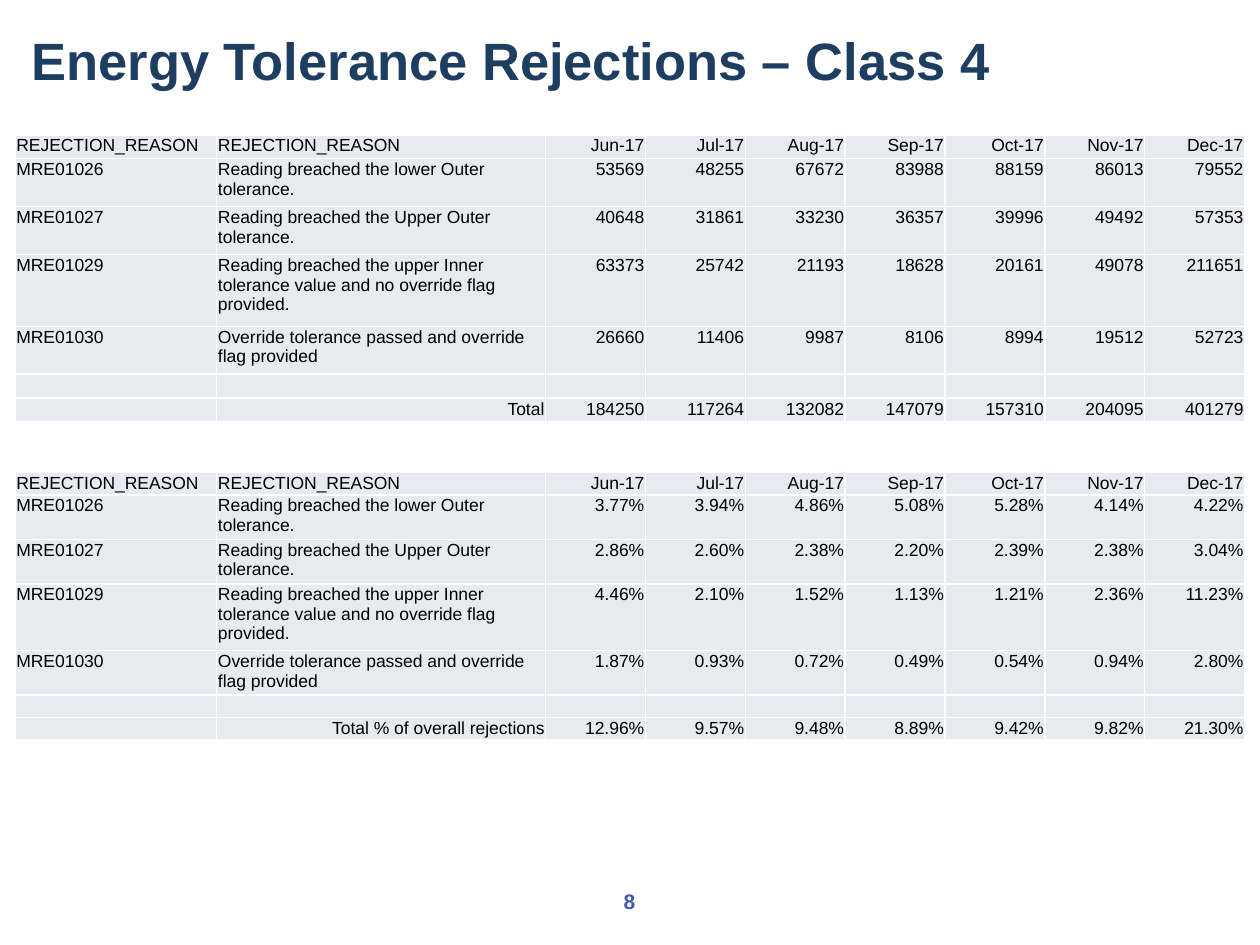
"""Builds a slide with two tables of energy tolerance rejections by month."""
from dataclasses import dataclass

from lxml import etree
from pptx import Presentation
from pptx.dml.color import RGBColor
from pptx.enum.text import MSO_ANCHOR, PP_ALIGN
from pptx.oxml.ns import qn
from pptx.util import Inches, Pt

LEFT, CENTER, RIGHT = PP_ALIGN.LEFT, PP_ALIGN.CENTER, PP_ALIGN.RIGHT
TOP, MIDDLE = MSO_ANCHOR.TOP, MSO_ANCHOR.MIDDLE
NAVY = RGBColor(0x1D, 0x3E, 0x61)
BLUE = RGBColor(0x3E, 0x5A, 0xA8)
BLACK = RGBColor(0x00, 0x00, 0x00)
WHITE = RGBColor(0xFF, 0xFF, 0xFF)
PALE = RGBColor(0xE8, 0xEA, 0xF1)
FONT = "Arial"

TABLE_LEFT, TABLE_WIDTH = 0.12, 9.76
CODE_WIDTH, REASON_WIDTH = 1.6, 2.61
MONTHS = ["Jun-17", "Jul-17", "Aug-17", "Sep-17", "Oct-17", "Nov-17", "Dec-17"]
MONTH_WIDTH = (TABLE_WIDTH - CODE_WIDTH - REASON_WIDTH) / len(MONTHS)
REASONS = [
    ("MRE01026", "Reading breached the lower Outer tolerance."),
    ("MRE01027", "Reading breached the Upper Outer tolerance."),
    ("MRE01029", "Reading breached the upper Inner tolerance value and no override flag provided."),
    ("MRE01030", "Override tolerance passed and override flag provided"),
]
ROW_LINES = [1, 2, 2, 3, 2, 1, 1]


@dataclass
class RejectionTable:
    top: float
    line_height: float
    monthly_values: list[str]
    total_label: str
    totals: str


REJECTION_TABLES = [
    RejectionTable(1.07, 0.19, [
        "53569 48255 67672 83988 88159 86013 79552",
        "40648 31861 33230 36357 39996 49492 57353",
        "63373 25742 21193 18628 20161 49078 211651",
        "26660 11406 9987 8106 8994 19512 52723",
    ], "Total", "184250 117264 132082 147079 157310 204095 401279"),
    RejectionTable(3.75, 2.12 / sum(ROW_LINES), [
        "3.77% 3.94% 4.86% 5.08% 5.28% 4.14% 4.22%",
        "2.86% 2.60% 2.38% 2.20% 2.39% 2.38% 3.04%",
        "4.46% 2.10% 1.52% 1.13% 1.21% 2.36% 11.23%",
        "1.87% 0.93% 0.72% 0.49% 0.54% 0.94% 2.80%",
    ], "Total % of overall rejections", "12.96% 9.57% 9.48% 8.89% 9.42% 9.82% 21.30%"),
]


def write(frame, text: str, *, size: float, color: RGBColor, bold: bool = False, align=LEFT) -> None:
    paragraph = frame.paragraphs[0]
    paragraph.alignment = align
    if not text:
        etree.SubElement(paragraph._p, qn("a:endParaRPr"), sz=str(int(size * 100)))
        return
    run = paragraph.add_run()
    run.text = text
    run.font.name = FONT
    run.font.size = Pt(size)
    run.font.bold = bold
    run.font.color.rgb = color


def add_label(slide, text: str, left: float, top: float, width: float, height: float, **text_format) -> None:
    frame = slide.shapes.add_textbox(Inches(left), Inches(top), Inches(width), Inches(height)).text_frame
    frame.word_wrap = True
    frame.vertical_anchor = MIDDLE
    frame.margin_left = frame.margin_right = frame.margin_top = frame.margin_bottom = 0
    write(frame, text, **text_format)


def style_cell(cell) -> None:
    cell.margin_left = cell.margin_right = cell.margin_top = Inches(0.01)
    cell.margin_bottom = 0
    cell.vertical_anchor = TOP
    properties = cell._tc.get_or_add_tcPr()
    for side in ("lnL", "lnR", "lnT", "lnB"):
        border = etree.SubElement(properties, qn(f"a:{side}"), w=str(Pt(1)))
        border_fill = etree.SubElement(border, qn("a:solidFill"))
        etree.SubElement(border_fill, qn("a:srgbClr"), val=str(WHITE))
    cell.fill.solid()
    cell.fill.fore_color.rgb = PALE


def add_rejections(slide, rejections: RejectionTable) -> None:
    content = [["REJECTION_REASON", "REJECTION_REASON", *MONTHS]]
    for reason, values in zip(REASONS, rejections.monthly_values):
        content.append([*reason, *values.split()])
    content.append([""] * len(content[0]))
    content.append(["", rejections.total_label, *rejections.totals.split()])

    table = slide.shapes.add_table(
        len(content), len(content[0]), Inches(TABLE_LEFT), Inches(rejections.top),
        Inches(TABLE_WIDTH), Inches(rejections.line_height * sum(ROW_LINES))).table
    table.first_row = table.horz_banding = False
    widths = [CODE_WIDTH, REASON_WIDTH] + [MONTH_WIDTH] * len(MONTHS)
    for column, width in zip(table.columns, widths):
        column.width = Inches(width)
    for row, lines in zip(table.rows, ROW_LINES):
        row.height = Inches(rejections.line_height * lines)

    for row_index, texts in enumerate(content):
        for column_index, text in enumerate(texts):
            cell = table.cell(row_index, column_index)
            style_cell(cell)
            is_right = column_index > 1 or text == rejections.total_label
            write(cell.text_frame, text, size=10, color=BLACK, align=RIGHT if is_right else LEFT)


def main() -> None:
    presentation = Presentation()
    presentation.slide_width, presentation.slide_height = Inches(10), Inches(7.5)
    slide = presentation.slides.add_slide(presentation.slide_layouts[6])
    add_label(slide, "8", 3.83, 6.95, 2.33, 0.4, size=12, color=BLUE, bold=True, align=CENTER)
    add_label(slide, "Energy Tolerance Rejections – Class 4", 0.25, -0.06, 9.5, 1.06,
              size=30, color=NAVY, bold=True)
    for rejections in REJECTION_TABLES:
        add_rejections(slide, rejections)
    presentation.save("out.pptx")


if __name__ == "__main__":
    main()
